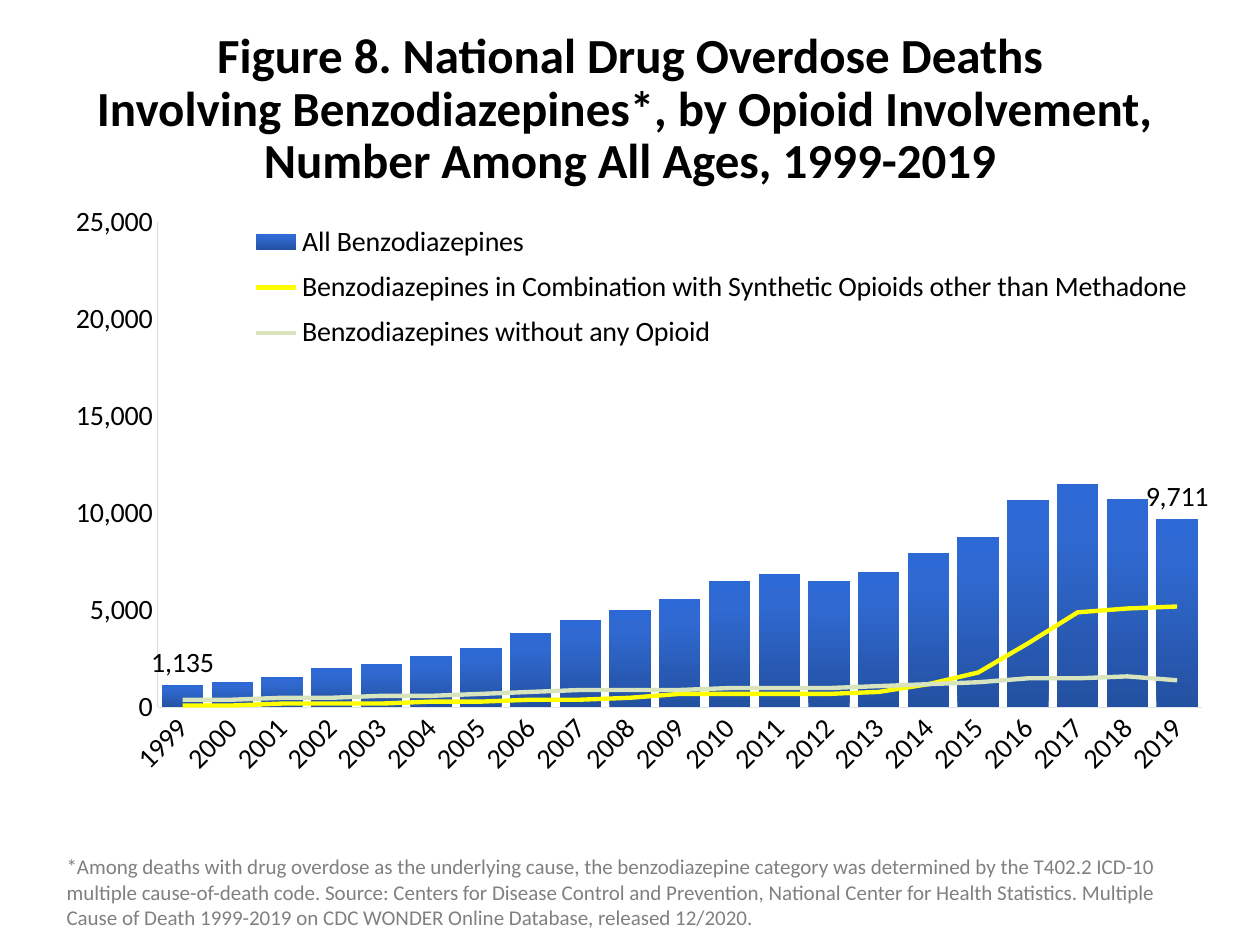
"""Build a slide charting overdose deaths involving benzodiazepines, 1999-2019."""
from dataclasses import dataclass

from lxml import etree
from pptx import Presentation
from pptx.chart.chart import Chart
from pptx.chart.data import CategoryChartData
from pptx.dml.color import RGBColor
from pptx.enum.chart import XL_CHART_TYPE, XL_LABEL_POSITION, XL_LEGEND_POSITION, XL_MARKER_STYLE, XL_TICK_MARK
from pptx.enum.text import MSO_ANCHOR, PP_ALIGN
from pptx.oxml import parse_xml
from pptx.oxml.ns import nsdecls, qn
from pptx.slide import Slide
from pptx.util import Inches, Pt

CLUSTERED = XL_CHART_TYPE.COLUMN_CLUSTERED
OUTSIDE_END = XL_LABEL_POSITION.OUTSIDE_END
LEGEND_BOTTOM = XL_LEGEND_POSITION.BOTTOM
NO_MARKER = XL_MARKER_STYLE.NONE
NO_TICK = XL_TICK_MARK.NONE
MIDDLE, TOP = MSO_ANCHOR.MIDDLE, MSO_ANCHOR.TOP
CENTER, LEFT = PP_ALIGN.CENTER, PP_ALIGN.LEFT
SLIDE_WIDTH, SLIDE_HEIGHT = Inches(10), Inches(7.5)


@dataclass(frozen=True)
class Theme:
    """Font, type sizes and colours of the slide."""
    font: str = "Calibri"
    title_size: int = 28
    chart_size: int = 16
    note_size: int = 12
    ink: str = "000000"
    note: str = "808080"
    category_line: str = "E0E5EB"
    value_line: str = "D9D9D9"
    bar_stops: tuple = ((0, "2451A1"), (80, "2F69D1"), (100, "2C69D5"))
    line_colors: tuple = ("FFFF00", "D7E4BD")


@dataclass(frozen=True)
class Box:
    """A rectangle given as shares of its container."""
    left: float
    top: float
    width: float
    height: float

    def on_slide(self) -> tuple:
        """Return the rectangle in slide units."""
        return (int(self.left * SLIDE_WIDTH), int(self.top * SLIDE_HEIGHT),
                int(self.width * SLIDE_WIDTH), int(self.height * SLIDE_HEIGHT))


@dataclass(frozen=True)
class TextBlock:
    """A text box with one paragraph of one or more lines."""
    box: Box
    lines: tuple
    size: int
    color: str
    bold: bool = False
    align: PP_ALIGN = LEFT
    anchor: MSO_ANCHOR = TOP
    spacing: float = 1.0


@dataclass(frozen=True)
class DeathSeries:
    """A named row of yearly deaths."""
    name: str
    values: tuple


THEME = Theme()
CHART_BOX = Box(0.018, 0.213, 0.965, 0.651)
PLOT_BOX = Box(0.111, 0.034, 0.859, 0.789)
LEGEND_BOX = Box(0.16, 0.02, 0.83, 0.24)
YEARS = tuple(str(year) for year in range(1999, 2020))
SERIES = (
    DeathSeries("All Benzodiazepines",
                (1135, 1298, 1594, 2022, 2248, 2627, 3084, 3835, 4500, 5010, 5567,
                 6497, 6872, 6524, 6973, 7945, 8791, 10684, 11537, 10724, 9711)),
    DeathSeries("Benzodiazepines in Combination with Synthetic Opioids other than Methadone",
                (100, 100, 200, 200, 200, 300, 300, 400, 400, 500, 700,
                 700, 700, 700, 800, 1200, 1800, 3300, 4900, 5100, 5200)),
    DeathSeries("Benzodiazepines without any Opioid",
                (400, 400, 500, 500, 600, 600, 700, 800, 900, 900, 900,
                 1000, 1000, 1000, 1100, 1200, 1300, 1500, 1500, 1600, 1400)),
)
TITLE = TextBlock(
    Box(0, 0.02, 1, 0.193),
    ("Figure 8. National Drug Overdose Deaths",
     "Involving Benzodiazepines*, by Opioid Involvement, ",
     "Number Among All Ages, 1999-2019"),
    THEME.title_size, THEME.ink, True, CENTER, MIDDLE, 0.9)
FOOTNOTE = TextBlock(
    Box(0.043, 0.897, 0.914, 0.095),
    ("*Among deaths with drug overdose as the underlying cause, the benzodiazepine category "
     "was determined by the T402.2 ICD-10 multiple cause-of-death code. Source: Centers for "
     "Disease Control and Prevention, National Center for Health Statistics. Multiple Cause of "
     "Death 1999-2019 on CDC WONDER Online Database, released 12/2020.",),
    THEME.note_size, THEME.note)


def style_font(font, size: int, color: str, bold: bool = False) -> None:
    """Apply the theme font with a size and colour."""
    font.name, font.size, font.bold = THEME.font, Pt(size), bold
    font.color.rgb = RGBColor.from_string(color)


def style_line(line, color: str, width: float) -> None:
    """Set a line's colour and width in points."""
    line.color.rgb = RGBColor.from_string(color)
    line.width = Pt(width)


def add_text(slide: Slide, block: TextBlock) -> None:
    """Draw a text block."""
    frame = slide.shapes.add_textbox(*block.box.on_slide()).text_frame
    frame.word_wrap, frame.vertical_anchor = True, block.anchor
    paragraph = frame.paragraphs[0]
    paragraph.alignment, paragraph.line_spacing = block.align, block.spacing
    for index, line in enumerate(block.lines):
        if index:
            paragraph.add_line_break()
        run = paragraph.add_run()
        run.text = line
        style_font(run.font, block.size, block.color, block.bold)


def set_layout(parent, position: int, box: Box, inner: bool = False) -> None:
    """Give a plot area or legend a fixed place in the chart."""
    for old in parent.findall(qn("c:layout")):
        parent.remove(old)
    target = '<c:layoutTarget val="inner"/>' if inner else ""
    fields = (("xMode", "edge"), ("yMode", "edge"), ("x", box.left), ("y", box.top),
              ("w", box.width), ("h", box.height))
    content = "".join(f'<c:{name} val="{value}"/>' for name, value in fields)
    parent.insert(position, parse_xml(
        f'<c:layout {nsdecls("c")}><c:manualLayout>{target}{content}</c:manualLayout></c:layout>'))


def move_to_lines(chart: Chart) -> None:
    """Turn every series after the first into a line on the same axes."""
    bars = chart.plots[0]._element
    lines = parse_xml(f'<c:lineChart {nsdecls("c")}><c:grouping val="standard"/>'
                      '<c:varyColors val="0"/></c:lineChart>')
    for series in bars.findall(qn("c:ser"))[1:]:
        for flag in series.findall(qn("c:invertIfNegative")):
            series.remove(flag)
        lines.append(series)
    etree.SubElement(lines, qn("c:marker")).set("val", "1")
    for axis in bars.findall(qn("c:axId")):
        etree.SubElement(lines, qn("c:axId")).set("val", axis.get("val"))
    bars.addnext(lines)


def style_bars(chart: Chart) -> None:
    """Fill the bars with the gradient and label the first and last."""
    plot = chart.plots[0]
    plot.gap_width, plot.vary_by_categories = 20, False
    series = plot.series[0]
    series.format.fill.background()
    properties = series._element.find(qn("c:spPr"))
    stops = "".join(f'<a:gs pos="{share * 1000}"><a:srgbClr val="{color}"/></a:gs>'
                    for share, color in THEME.bar_stops)
    properties.replace(properties.find(qn("a:noFill")), parse_xml(
        f'<a:gradFill {nsdecls("a")}><a:gsLst>{stops}</a:gsLst>'
        '<a:lin ang="16200000" scaled="0"/></a:gradFill>'))
    series.format.line.fill.background()
    series.data_labels.show_value = False
    for index in (0, len(YEARS) - 1):
        label = series.points[index].data_label
        style_font(label.font, THEME.chart_size, THEME.ink)
        label.position = OUTSIDE_END


def style_axes(chart: Chart) -> None:
    """Set the scale, lines and labels of both axes."""
    category, value = chart.category_axis, chart.value_axis
    for axis, color in ((category, THEME.category_line), (value, THEME.value_line)):
        axis.major_tick_mark = axis.minor_tick_mark = NO_TICK
        axis.has_major_gridlines = False
        style_line(axis.format.line, color, 0.75)
        style_font(axis.tick_labels.font, THEME.chart_size, THEME.ink)
    category._element.find(qn("c:txPr")).find(qn("a:bodyPr")).set("rot", "-2700000")
    value.minimum_scale, value.maximum_scale, value.major_unit = 0, 25000, 5000
    value.tick_labels.number_format = "#,##0"
    value.tick_labels.number_format_is_linked = False


def add_deaths_chart(slide: Slide) -> None:
    """Draw the combined bar and line chart."""
    data = CategoryChartData(number_format="#,##0")
    data.categories = YEARS
    for series in SERIES:
        data.add_series(series.name, series.values)
    chart = slide.shapes.add_chart(CLUSTERED, *CHART_BOX.on_slide(), data).chart
    chart.has_title = False
    style_font(chart.font, THEME.chart_size, THEME.ink)
    move_to_lines(chart)
    style_bars(chart)
    for series, color in zip(chart.plots[1].series, THEME.line_colors):
        style_line(series.format.line, color, 2.5)
        series.marker.style, series.smooth = NO_MARKER, False
    style_axes(chart)
    chart.has_legend = True
    legend = chart.legend
    legend.position, legend.include_in_layout = LEGEND_BOTTOM, False
    style_font(legend.font, THEME.chart_size, THEME.ink)
    set_layout(legend._element, 1, LEGEND_BOX)
    set_layout(chart.plots[0]._element.getparent(), 0, PLOT_BOX, inner=True)


def main() -> None:
    """Build and save the slide."""
    presentation = Presentation()
    presentation.slide_width, presentation.slide_height = SLIDE_WIDTH, SLIDE_HEIGHT
    slide = presentation.slides.add_slide(presentation.slide_layouts[6])
    add_text(slide, TITLE)
    add_deaths_chart(slide)
    add_text(slide, FOOTNOTE)
    presentation.save("out.pptx")


if __name__ == "__main__":
    main()
